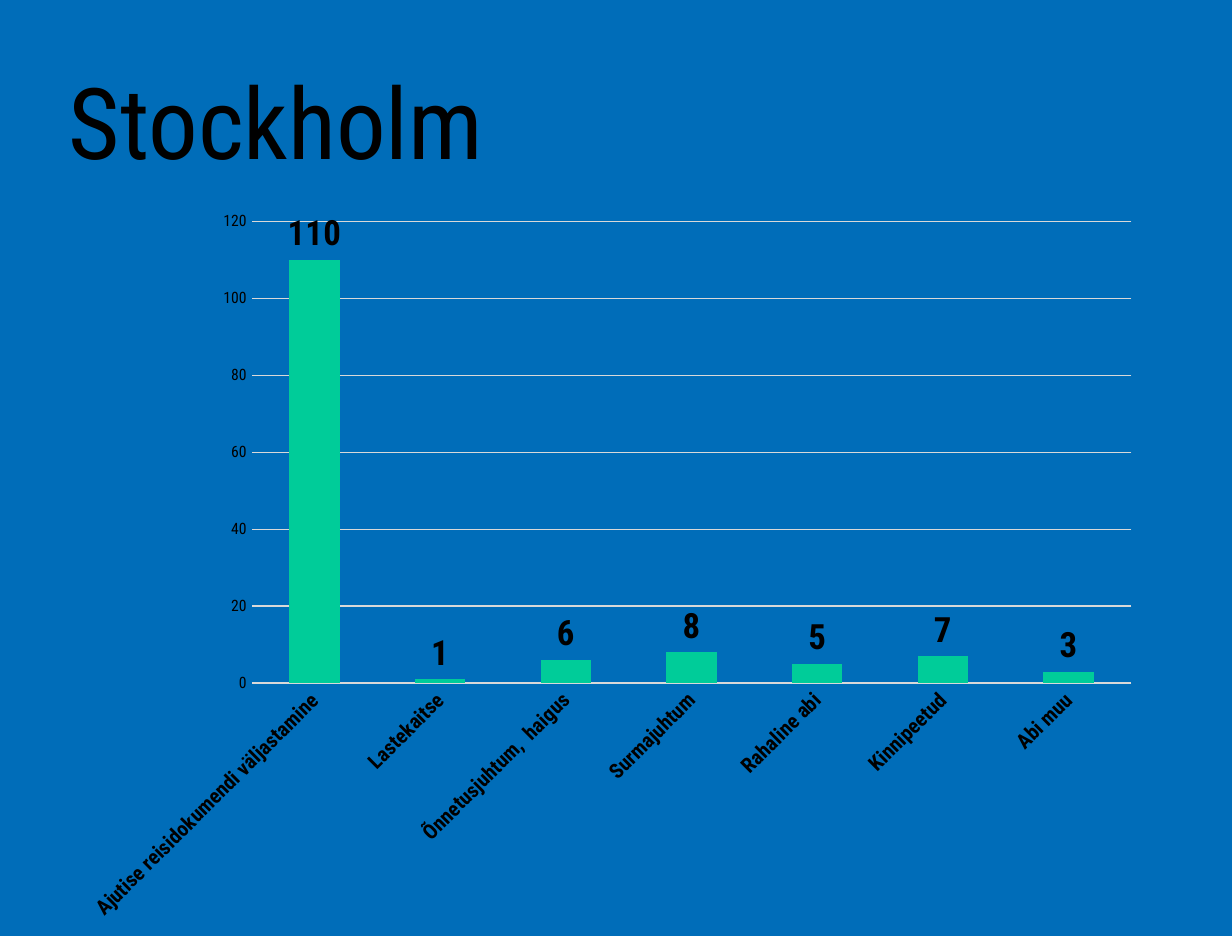
"""Build the Stockholm slide: a title above a column chart of consular cases."""
from lxml import etree
from pptx import Presentation
from pptx.chart.data import CategoryChartData
from pptx.dml.color import RGBColor
from pptx.enum import chart as ch, text as tx
from pptx.oxml import ns
from pptx.util import Cm, Inches, Pt

TITLE = "Stockholm"
CASES = [
    ("Ajutise reisidokumendi väljastamine", 110),
    ("Lastekaitse", 1),
    ("Õnnetusjuhtum,  haigus", 6),
    ("Surmajuhtum", 8),
    ("Rahaline abi", 5),
    ("Kinnipeetud", 7),
    ("Abi muu", 3),
]
SIZE = (25, 19)
HEAD = (0.55, 0.35, 8.66, 1.35)
CHART = (0.55, 1.57, 8.66, 5.91)
PLOT = (2.01, 1.77, 7.03, 3.69)
THEME = {
    "font": "Roboto Condensed", "ink": "000000", "back": "006DB9",
    "bar": "00CC99", "grid": "D9D9D9",
    "title": 57, "base": 10, "cat": 12, "val": 9, "label": 20,
}


def color(key):
    return RGBColor.from_string(THEME[key])


def style(font, size, bold=False):
    font.name = THEME["font"]
    font.size = Pt(THEME[size])
    font.bold = bold
    font.color.rgb = color("ink")


def add_text(slide, words, box, size, bold=False, space=1.0):
    frame = slide.shapes.add_textbox(*map(Inches, box)).text_frame
    frame.word_wrap = True
    frame.vertical_anchor = tx.MSO_ANCHOR.MIDDLE
    frame.margin_left = frame.margin_right = 0
    frame.margin_top = frame.margin_bottom = 0
    para = frame.paragraphs[0]
    para.line_spacing = space
    run = para.add_run()
    run.text = words
    style(run.font, size, bold)


def place_plot(chart):
    area = chart._chartSpace.chart.plotArea
    for old in area.findall(ns.qn("c:layout")):
        area.remove(old)
    layout = etree.Element(ns.qn("c:layout"))
    manual = etree.SubElement(layout, ns.qn("c:manualLayout"))
    left, top, wide, high = CHART
    x, y, w, h = PLOT
    parts = [
        ("layoutTarget", "inner"), ("xMode", "edge"), ("yMode", "edge"),
        ("x", (x - left) / wide), ("y", (y - top) / high),
        ("w", w / wide), ("h", h / high),
    ]
    for tag, val in parts:
        etree.SubElement(manual, ns.qn("c:" + tag)).set("val", str(val))
    area.insert(0, layout)


def add_bars(slide):
    data = CategoryChartData()
    data.categories = [name for name, count in CASES]
    data.add_series("Series 1", [count for name, count in CASES])
    chart = slide.shapes.add_chart(
        ch.XL_CHART_TYPE.COLUMN_CLUSTERED, *map(Inches, CHART), data).chart
    chart.has_title = chart.has_legend = False
    style(chart.font, "base")
    place_plot(chart)

    cat, val = chart.category_axis, chart.value_axis
    for axis, size, bold in ((cat, "cat", True), (val, "val", False)):
        axis.major_tick_mark = axis.minor_tick_mark = ch.XL_TICK_MARK.NONE
        axis.format.line.fill.background()
        style(axis.tick_labels.font, size, bold)
    turn = cat._element.find(ns.qn("c:txPr")).find(ns.qn("a:bodyPr"))
    turn.set("rot", str(-45 * 60000))
    turn.set("vert", "horz")
    val.minimum_scale, val.maximum_scale, val.major_unit = 0, 120, 20
    val.has_major_gridlines = True
    line = val.major_gridlines.format.line
    line.color.rgb = color("grid")
    line.width = Pt(0.75)

    plot = chart.plots[0]
    plot.gap_width = 150
    plot.vary_by_categories = False
    bars = plot.series[0]
    bars.format.fill.solid()
    bars.format.fill.fore_color.rgb = color("bar")
    labels = bars.data_labels
    labels.show_value = True
    labels.position = ch.XL_LABEL_POSITION.OUTSIDE_END
    style(labels.font, "label", True)


def main():
    deck = Presentation()
    deck.slide_width, deck.slide_height = map(Cm, SIZE)
    slide = deck.slides.add_slide(deck.slide_layouts[6])
    slide.background.fill.solid()
    slide.background.fill.fore_color.rgb = color("back")
    add_text(slide, TITLE, HEAD, "title", space=0.88)
    add_bars(slide)
    deck.save("out.pptx")


if __name__ == "__main__":
    main()
